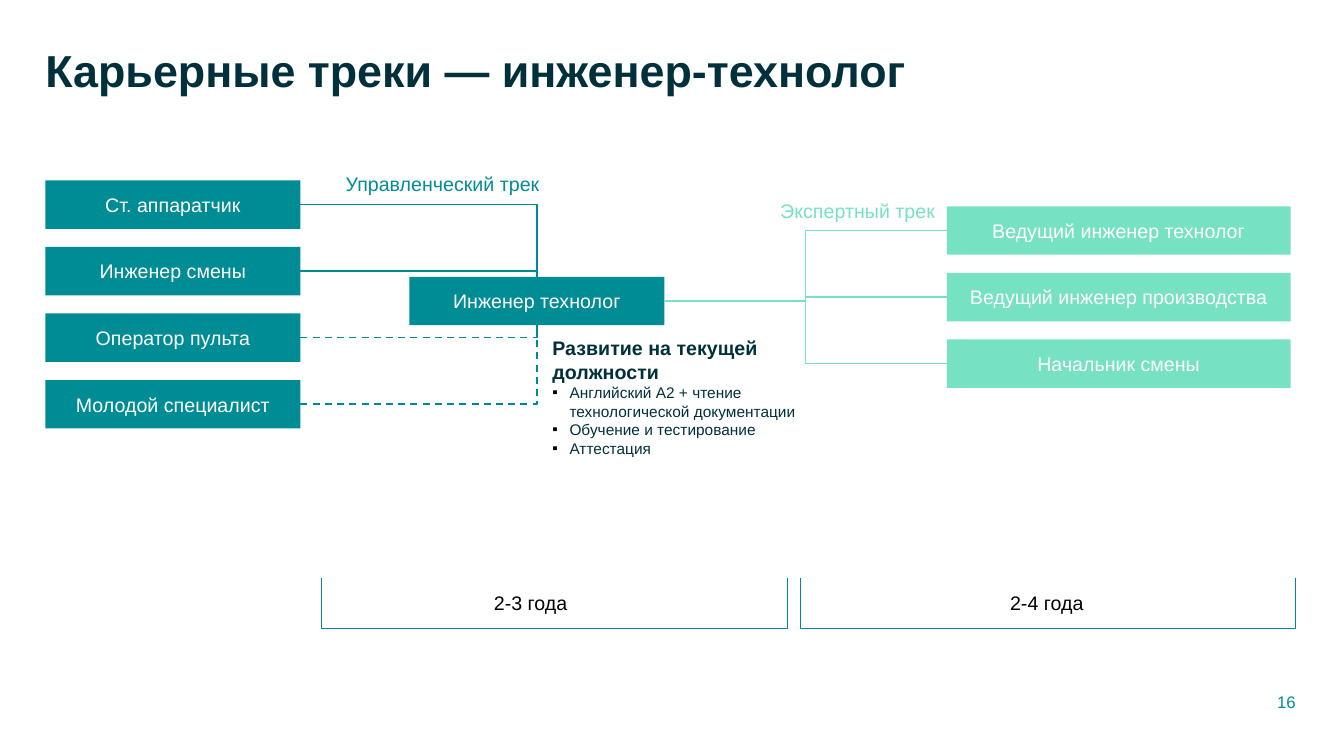
from dataclasses import dataclass

from lxml import etree
from pptx import Presentation
from pptx.dml.color import RGBColor
from pptx.enum.dml import MSO_LINE
from pptx.enum.shapes import MSO_CONNECTOR, MSO_SHAPE
from pptx.enum.text import MSO_ANCHOR, MSO_AUTO_SIZE, PP_ALIGN
from pptx.oxml.ns import qn
from pptx.util import Inches, Pt

RECT, BRACKET = MSO_SHAPE.RECTANGLE, MSO_SHAPE.LEFT_BRACKET
ELBOW, DASH = MSO_CONNECTOR.ELBOW, MSO_LINE.DASH
LEFT, CENTER, RIGHT = PP_ALIGN.LEFT, PP_ALIGN.CENTER, PP_ALIGN.RIGHT
TOP, MIDDLE = MSO_ANCHOR.TOP, MSO_ANCHOR.MIDDLE
TOP_SITE, LEFT_SITE, BOTTOM_SITE, RIGHT_SITE = range(4)


@dataclass(frozen=True)
class Theme:
    font: str = "Arial"
    ink: str = "00303C"
    teal: str = "008C95"
    line: str = "008992"
    mint: str = "77E2C3"
    white: str = "FFFFFF"
    black: str = "000000"
    title: int = 32
    body: int = 14
    number: int = 12
    small: int = 11
    connector: float = 1.25
    bracket: float = 0.75


THEME = Theme()

# Grid: three columns of boxes, rows at an equal pitch
START_X, HUB_X, GOAL_X = 0.45, 4.06, 9.39
BOX_W, GOAL_W, BOX_H = 2.53, 3.41, 0.48
FIRST_ROW, ROW_PITCH = 1.79, 0.66
HUB_ROW, GOAL_ROW = 1.45, 0.39
BRACKET_ROW, YEARS_ROW = 5.97, 6.09
BRACKET_H, LABEL_H = 0.5, 0.34

STARTS = [
    ("Ст. аппаратчик", TOP_SITE, False),
    ("Инженер смены", TOP_SITE, False),
    ("Оператор пульта", BOTTOM_SITE, True),
    ("Молодой специалист", BOTTOM_SITE, True),
]
GOALS = ["Ведущий инженер технолог", "Ведущий инженер производства", "Начальник смены"]
# text, bracket left, bracket width, text left
PERIODS = [("2-3 года", 3.19, 4.62, 4.8), ("2-4 года", 7.94, 4.91, 9.92)]
SKILLS = [
    "Английский А2 + чтение технологической документации",
    "Обучение и тестирование",
    "Аттестация",
]


def rgb(color):
    return RGBColor.from_string(color)


def row_y(row):
    return FIRST_ROW + row * ROW_PITCH


def add_run(p, text, size, color, bold=False):
    r = p.add_run()
    r.text = text
    r.font.name, r.font.size, r.font.bold = THEME.font, Pt(size), bold
    r.font.color.rgb = rgb(color)


def add_text(s, x, row, w, h, text, size, color, bold=False, align=LEFT,
             anchor=TOP, wrap=True):
    tb = s.shapes.add_textbox(Inches(x), Inches(row_y(row)), Inches(w), Inches(h))
    tf = tb.text_frame
    tf.word_wrap, tf.vertical_anchor = wrap, anchor
    tf.paragraphs[0].alignment = align
    add_run(tf.paragraphs[0], text, size, color, bold)
    return tf


def add_label(s, x, row, w, text, color):
    tf = add_text(s, x, row, w, LABEL_H, text, THEME.body, color, wrap=False)
    tf.auto_size = MSO_AUTO_SIZE.SHAPE_TO_FIT_TEXT


def add_bullet(tf, text):
    p = tf.add_paragraph()
    pPr = p._p.get_or_add_pPr()
    pPr.set("marL", str(Inches(0.17)))
    pPr.set("indent", str(-Inches(0.17)))
    color = etree.SubElement(pPr, qn("a:buClr"))
    etree.SubElement(color, qn("a:srgbClr"), val=THEME.black)
    etree.SubElement(pPr, qn("a:buFont"), typeface=THEME.font)
    etree.SubElement(pPr, qn("a:buChar"), char="▪")
    add_run(p, text, THEME.small, THEME.ink)


def add_box(s, x, row, w, text, color):
    sp = s.shapes.add_shape(RECT, Inches(x), Inches(row_y(row)), Inches(w), Inches(BOX_H))
    sp.shadow.inherit = False
    sp.fill.solid()
    sp.fill.fore_color.rgb = rgb(color)
    sp.line.fill.background()
    tf = sp.text_frame
    tf.word_wrap, tf.vertical_anchor = True, MIDDLE
    tf.paragraphs[0].alignment = CENTER
    add_run(tf.paragraphs[0], text, THEME.body, THEME.white)
    return sp


def add_link(s, start, end, end_site, color, dashed=False):
    """Join the right side of start to a site of end; top and bottom sites need one bend."""
    link = s.shapes.add_connector(ELBOW, 0, 0, 0, 0)
    link.begin_connect(start, RIGHT_SITE)
    link.end_connect(end, end_site)
    link.line.color.rgb = rgb(color)
    link.line.width = Pt(THEME.connector)
    if dashed:
        link.line.dash_style = DASH
    spPr = link._element.spPr
    if end_site != LEFT_SITE:
        spPr.find(qn("a:prstGeom")).set("prst", "bentConnector2")
    etree.SubElement(spPr, qn("a:effectLst"))


def add_period(s, text, x, w, text_x):
    """Draw an upward-open bracket, turned about its centre, with its label."""
    mid_x, mid_y = x + w / 2, row_y(BRACKET_ROW) + BRACKET_H / 2
    sp = s.shapes.add_shape(BRACKET, Inches(mid_x - BRACKET_H / 2), Inches(mid_y - w / 2),
                            Inches(BRACKET_H), Inches(w))
    sp.rotation = 270
    sp.adjustments[0] = 0
    sp.shadow.inherit = False
    sp.fill.background()
    sp.line.color.rgb = rgb(THEME.line)
    sp.line.width = Pt(THEME.bracket)
    add_label(s, text_x, YEARS_ROW, 0.94, text, THEME.black)


def add_tracks(s):
    hub = add_box(s, HUB_X, HUB_ROW, BOX_W, "Инженер технолог", THEME.teal)
    for row, (text, site, dashed) in enumerate(STARTS):
        box = add_box(s, START_X, row, BOX_W, text, THEME.teal)
        add_link(s, box, hub, site, THEME.line, dashed)
    for row, text in enumerate(GOALS):
        box = add_box(s, GOAL_X, GOAL_ROW + row, GOAL_W, text, THEME.mint)
        add_link(s, hub, box, LEFT_SITE, THEME.mint)
    add_label(s, 3.33, -0.21, 2.15, "Управленческий трек", THEME.teal)
    add_label(s, 7.64, 0.21, 1.75, "Экспертный трек", THEME.mint)


def add_development(s):
    tf = add_text(s, 5.38, 2.27, 2.79, 1.5, "Развитие на текущей должности",
                  THEME.body, THEME.ink, bold=True)
    for skill in SKILLS:
        add_bullet(tf, skill)


def main():
    prs = Presentation()
    prs.slide_width, prs.slide_height = Inches(13.33), Inches(7.5)
    s = prs.slides.add_slide(prs.slide_layouts[6])
    title = add_text(s, START_X, -2.05, 10.77, 1.11, "Карьерные треки — инженер-технолог",
                     THEME.title, THEME.ink, bold=True)
    title.margin_left = 0
    title.paragraphs[0].line_spacing = 0.9
    add_tracks(s)
    add_development(s)
    for period in PERIODS:
        add_period(s, *period)
    add_text(s, 12.42, 7.68, 0.53, 0.2, "16", THEME.number, THEME.teal,
             align=RIGHT, anchor=MIDDLE)
    prs.save("out.pptx")


if __name__ == "__main__":
    main()
